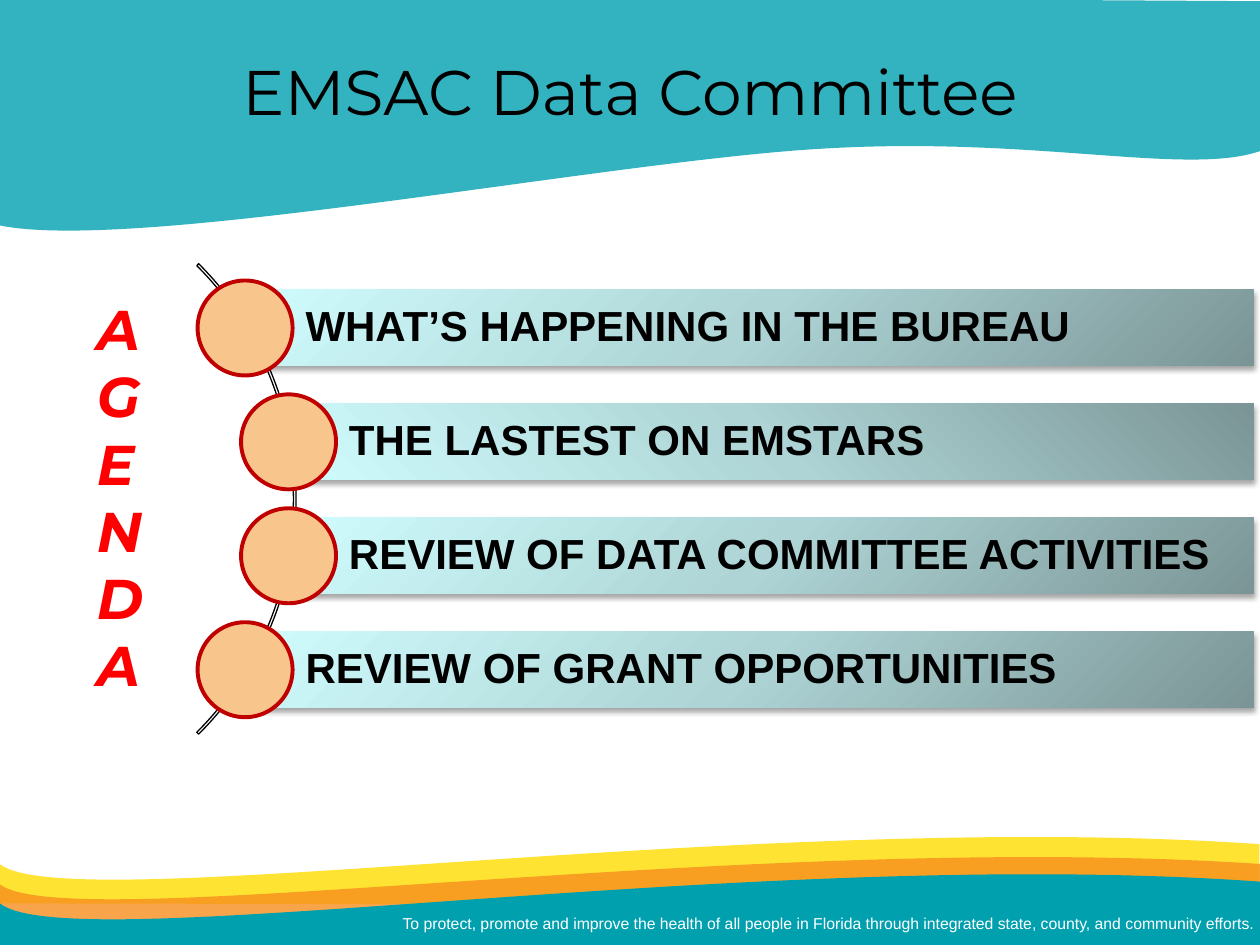
import pptx
import pptx.util
import pptx.dml.color
import pptx.enum.shapes
import pptx.enum.text
import pptx.oxml
import pptx.oxml.ns

# Grid of 100 columns by 75 rows on a 10 x 7.5 inch slide
CELL = pptx.util.Inches(0.1)
HUES = {
    "yellow": "FFDD00", "orange": "F78E1E", "teal": "00A0AF",
    "white": "FFFFFF", "black": "000000", "red": "FF0000",
    "rim": "C00000", "peach": "F8C58C",
    "dark": "7B9596", "mid": "AED4D5", "pale": "CFFCFD",
}
ITEMS = [
    ("WHAT’S HAPPENING IN THE BUREAU", 19.45, "bottom"),
    ("THE LASTEST ON EMSTARS", 22.9, "top"),
    ("REVIEW OF DATA COMMITTEE ACTIVITIES", 22.9, "bottom"),
    ("REVIEW OF GRANT OPPORTUNITIES", 19.45, "bottom"),
]
ALIGN = pptx.enum.text.PP_ALIGN
KIND = pptx.enum.shapes.MSO_SHAPE
MID = pptx.enum.text.MSO_ANCHOR.MIDDLE


def grid(*cells):
    return [round(c * CELL) for c in cells]


def color(name):
    return pptx.dml.color.RGBColor.from_string(HUES[name])


def node(tag, body="", attrs=""):
    space = pptx.oxml.ns.nsdecls("a")
    return pptx.oxml.parse_xml(f"<a:{tag} {space} {attrs}>{body}</a:{tag}>")


def bend(shape, count):
    """Turn the first sides, three by three, into cubic curves."""
    name = pptx.oxml.ns.qn
    sides = list(shape.element.spPr.iter(name("a:lnTo")))
    for k in range(0, 3 * count, 3):
        cubic = node("cubicBezTo")
        sides[k].addprevious(cubic)
        for side in sides[k:k + 3]:
            cubic.append(side[0])
            side.getparent().remove(side)


def wave(slide, hue, start, curves, ends, alpha=None):
    """Curves followed by straight sides, closed and filled."""
    points = [p for trio in curves for p in trio] + ends
    pen = slide.shapes.build_freeform(*grid(*start), scale=1.0)
    pen.add_line_segments([grid(*p) for p in points], close=True)
    shape = pen.convert_to_shape()
    bend(shape, len(curves))
    shape.shadow.inherit = False
    shape.fill.solid()
    shape.fill.fore_color.rgb = color(hue)
    shape.line.fill.background()
    if alpha:
        tint = shape.element.spPr.find(".//" + pptx.oxml.ns.qn("a:srgbClr"))
        tint.append(node("alpha", attrs=f'val="{alpha * 1000}"'))


def style(para, face, size, hue, bold=False, slant=False):
    font = para.font
    font.name, font.size = face, pptx.util.Pt(size)
    font.bold, font.italic = bold, slant
    font.color.rgb = color(hue)


def label(slide, box, lines, look, align=ALIGN.LEFT, anchor=None, wrap=True):
    frame = slide.shapes.add_textbox(*grid(*box)).text_frame
    frame.word_wrap = wrap
    frame.vertical_anchor = anchor
    frame.text = "\n".join(lines)
    for para in frame.paragraphs:
        para.alignment = align
        style(para, *look)


def bar(slide, text, left, mid, side):
    shape = slide.shapes.add_shape(
        KIND.RECTANGLE, *grid(left, mid - 3.03, 99.5 - left, 6.05))
    # Radial blend from a right-hand corner
    stops = "".join(
        f'<a:gs pos="{pos}000"><a:srgbClr val="{HUES[hue]}"/></a:gs>'
        for pos, hue in ((0, "dark"), (50, "mid"), (100, "pale")))
    edge = 't="100000"' if side == "bottom" else 'b="100000"'
    shape.element.spPr.append(node(
        "gradFill",
        f'<a:gsLst>{stops}</a:gsLst><a:path path="circle">'
        f'<a:fillToRect l="100000" {edge}/></a:path>'))
    shape.line.fill.background()
    shape.element.spPr.append(node(
        "effectLst",
        '<a:outerShdw blurRad="39400" dist="22900" dir="5400000" '
        'rotWithShape="0"><a:srgbClr val="000000">'
        '<a:alpha val="35000"/></a:srgbClr></a:outerShdw>'))
    frame = shape.text_frame
    frame.word_wrap = True
    frame.vertical_anchor = MID
    frame.margin_left = grid(4.8)[0]
    frame.margin_top = frame.margin_right = frame.margin_bottom = grid(0.7)[0]
    frame.text = text
    para = frame.paragraphs[0]
    para.alignment = ALIGN.LEFT
    para.line_spacing = 0.9
    style(para, "Arial", 24, "black", True)


def ring(slide, kind, box, hue, width, fill=None):
    shape = slide.shapes.add_shape(kind, *grid(*box))
    shape.shadow.inherit = False
    if fill:
        shape.fill.solid()
        shape.fill.fore_color.rgb = color(fill)
    else:
        shape.fill.background()
    shape.line.color.rgb = color(hue)
    shape.line.width = pptx.util.Pt(width)
    return shape


def main():
    deck = pptx.Presentation()
    deck.slide_width, deck.slide_height = grid(100, 75)
    slide = deck.slides.add_slide(deck.slide_layouts[6])

    # Bottom waves: right end, heights of the curve, depth of the band
    bands = [
        ("yellow", 99.95, (68.6, 72.9, 64.2, 67), 3.1, 80),
        ("orange", 100.4, (70.2, 74.4, 65.8, 68.6), 3.1, 80),
        ("teal", 100.4, (71.7, 76.2, 67, 70), 3.3, None),
    ]
    for hue, end, (a, b, c, d), deep, alpha in bands:
        wave(slide, hue, (0, a), [((5.6, b), (59.7, c), (end, d))],
             [(end, d + deep + 1.8), (0, a + deep)], alpha)
    label(slide, (10.1, 72, 90.4, 2.5),
          ["To protect, promote and improve the health of all people in "
           "Florida through integrated state, county, and community efforts."],
          ("Arial", 9, "white"), ALIGN.RIGHT)

    # Top wave
    wave(slide, "teal", (100, 12),
         [((94.2, 14), (82.1, 10.8), (65.4, 11.8)),
          ((48.7, 12.7), (10.9, 20.1), (0, 17.9))],
         [(-0.1, -0.5), (100, 0.1)], 80)

    # Agenda arc, bars and dots
    arc = ring(slide, KIND.BLOCK_ARC, (-29.3, 13.2, 52.8, 52.8), "black", 0.75)
    for k, turn in enumerate((189, 27, 0.004)):
        arc.adjustments[k] = turn
    for k, (text, left, side) in enumerate(ITEMS):
        mid = 26.03 + 9.04 * k
        bar(slide, text, left, mid, side)
        ring(slide, KIND.OVAL, (left - 3.77, mid - 3.77, 7.54, 7.54),
             "rim", 2.25, "peach")

    # Side word and title
    label(slide, (6.7, 22.9, 5.8, 33.3), "AGENDA",
          ("Montserrat", 32, "red", True, True), wrap=False)
    label(slide, (15, 1.7, 70, 11), ["EMSAC Data Committee"],
          ("Montserrat", 36, "black"), ALIGN.CENTER, MID)
    deck.save("out.pptx")


if __name__ == "__main__":
    main()
